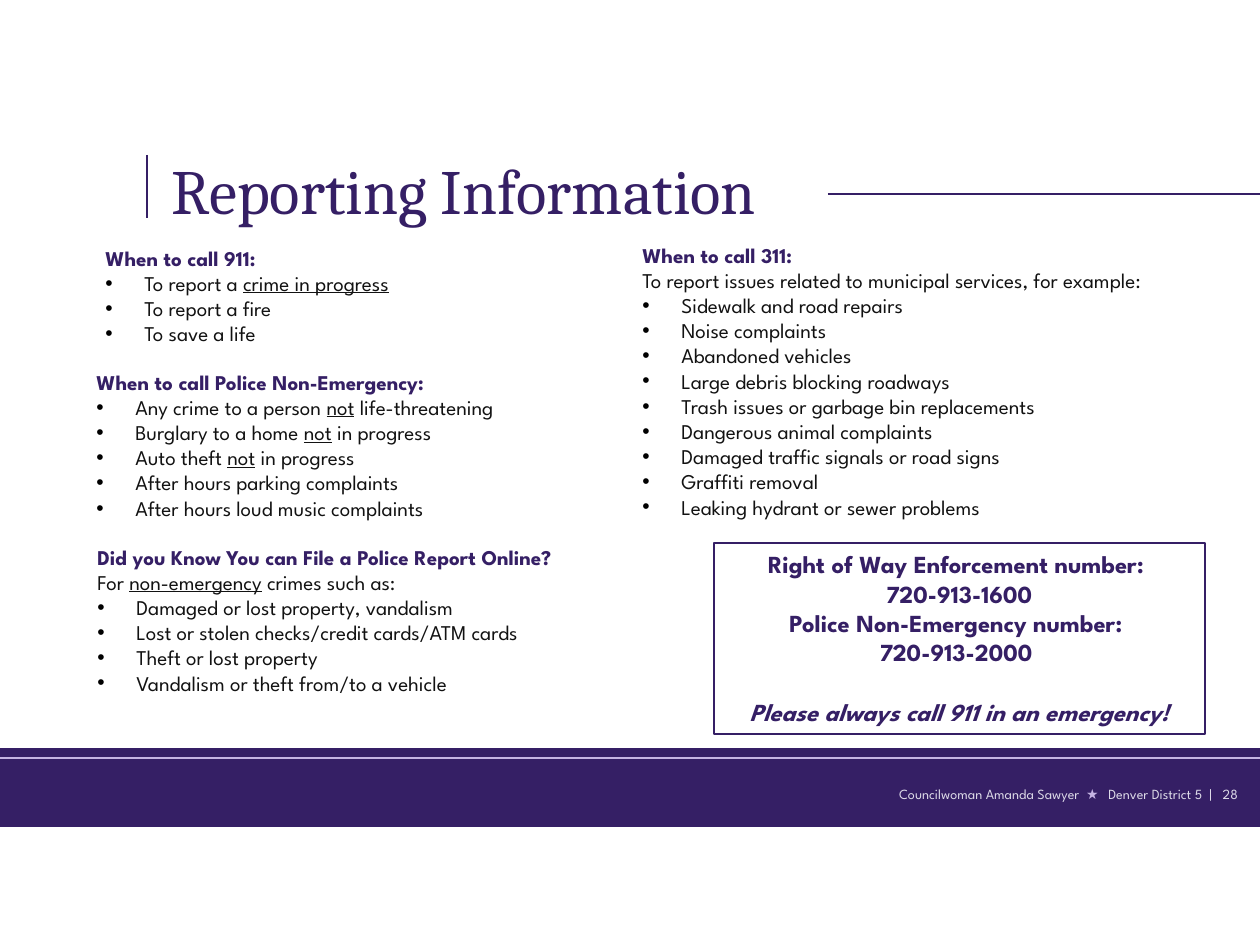
from lxml.etree import SubElement
from pptx import Presentation
from pptx.dml.color import RGBColor
from pptx.enum.shapes import MSO_CONNECTOR as Connector, MSO_SHAPE as Shape
from pptx.enum.text import MSO_ANCHOR as Anchor, PP_ALIGN as Align
from pptx.oxml.ns import qn
from pptx.util import Pt

PX = 914400 / 126
PURPLE, LILAC, PALE, INK, BLACK = "351F65", "C5B4E3", "DDDAE8", "121212", "000000"
SPARTAN = "League Spartan"


def px(*lengths):
    """Turn pixels into a list of EMU."""
    return [round(length * PX) for length in lengths]


def add_run(paragraph, text, color, tracking=0, **formats):
    """Add a run; tracking is extra letter spacing in hundredths of a point."""
    run = paragraph.add_run()
    run.text = text
    run.font.color.rgb = RGBColor.from_string(color)
    for name, value in formats.items():
        setattr(run.font, name, value)
    if tracking:
        run.font._element.set("spc", str(tracking))


prs = Presentation()
prs.slide_width, prs.slide_height = px(1260, 945)
slide = prs.slides.add_slide(prs.slide_layouts[6])
shapes = slide.shapes

# Title
title = shapes.add_textbox(*px(147, 139, 1110, 92)).text_frame
title.word_wrap = True
title.margin_left, title.margin_top = px(25, 13)
add_run(title.paragraphs[0], "Reporting Information", PURPLE, name="Cambria", size=Pt(36))

# Footer band, then the rules
band = shapes.add_shape(Shape.RECTANGLE, *px(0, 748, 1260, 79))
band.shadow.inherit = False
band.fill.solid()
band.fill.fore_color.rgb = RGBColor.from_string(PURPLE)
band.line.fill.background()

for ends, color, width in [
    ((147, 155, 147, 218), PURPLE, 0.75),
    ((0, 758, 1260, 758), LILAC, 1.5),
    ((828, 194, 1260, 194), PURPLE, 0.75),
]:
    rule = shapes.add_connector(Connector.STRAIGHT, *px(*ends))
    rule.line.color.rgb = RGBColor.from_string(color)
    rule.line.width = Pt(width)
    SubElement(rule._element.spPr, qn("a:effectLst"))

footer = shapes.add_textbox(*px(738, 772, 513, 43)).text_frame
footer.word_wrap = True
footer.margin_top, footer.margin_right = px(13, 13)
credit = footer.paragraphs[0]
credit.alignment = Align.RIGHT
for text, color, font, tracking in [
    ("Councilwoman Amanda Sawyer", PALE, SPARTAN, 0),
    (" ★ ", LILAC, "Arial Narrow", 180),
    ("Denver District 5", PALE, SPARTAN, 0),
    (" | ", PALE, SPARTAN, 200),
    ("28", PALE, SPARTAN, 0),
]:
    add_run(credit, text, color, tracking, name=font, size=Pt(8))

# Advice sections: place, heading, introduction, bullets; _ marks underlining
sections = [
    ((93, 239, 444, 115), "When to call 911:", None, [
        "To report a _crime in progress_",
        "To report a fire",
        "To save a life",
    ]),
    ((84, 363, 562, 165), "When to call Police Non-Emergency:", None, [
        "Any crime to a person _not_ life-threatening",
        "Burglary to a home _not_ in progress",
        "Auto theft _not_ in progress",
        "After hours parking complaints",
        "After hours loud music complaints",
    ]),
    ((85, 538, 562, 165), "Did you Know You can File a Police Report Online?",
     "For _non-emergency_ crimes such as:", [
        "Damaged or lost property, vandalism",
        "Lost or stolen checks/credit cards/ATM cards",
        "Theft or lost property",
        "Vandalism or theft from/to a vehicle",
    ]),
    ((630, 236, 630, 292), "When to call 311:",
     "To report issues related to municipal services, for example:", [
        "Sidewalk and road repairs",
        "Noise complaints",
        "Abandoned vehicles",
        "Large debris blocking roadways",
        "Trash issues or garbage bin replacements",
        "Dangerous animal complaints",
        "Damaged traffic signals or road signs",
        "Graffiti removal",
        "Leaking hydrant or sewer problems",
    ]),
]
indent = px(39)[0]
body = {"name": SPARTAN, "size": Pt(12)}
for place, heading, intro, bullets in sections:
    section = shapes.add_textbox(*px(*place)).text_frame
    section.word_wrap = True
    add_run(section.paragraphs[0], heading, PURPLE, bold=True, **body)
    for line in ([intro] if intro else []) + bullets:
        paragraph = section.add_paragraph()
        for position, part in enumerate(line.split("_")):
            if part:
                add_run(paragraph, part, INK, underline=position % 2 == 1, **body)
        if line != intro:
            pPr = paragraph._p.get_or_add_pPr()
            pPr.set("marL", str(indent))
            pPr.set("indent", str(-indent))
            SubElement(SubElement(pPr, qn("a:buClr")), qn("a:srgbClr"), val=BLACK)
            SubElement(pPr, qn("a:buFont"), typeface="Arial")
            SubElement(pPr, qn("a:buChar"), char="•")

# Phone numbers
phone_box = shapes.add_shape(Shape.RECTANGLE, *px(714, 543, 491, 191))
phone_box.shadow.inherit = False
phone_box.fill.background()
phone_box.line.color.rgb = RGBColor.from_string(PURPLE)
phone_box.line.width = Pt(0.75)
phones = phone_box.text_frame
phones.word_wrap = True
phones.vertical_anchor = Anchor.TOP
reminder = "Please always call 911 in an emergency!"
for position, line in enumerate([
    "Right of Way Enforcement number: ",
    "720-913-1600",
    "Police Non-Emergency number: ",
    "720-913-2000 ",
    reminder,
]):
    paragraph = phones.add_paragraph() if position else phones.paragraphs[0]
    paragraph.alignment = Align.CENTER
    if line == reminder:
        paragraph.space_before = Pt(17)
    add_run(paragraph, line, PURPLE, name=SPARTAN, size=Pt(14), bold=True,
            italic=line == reminder)

prs.save("out.pptx")
